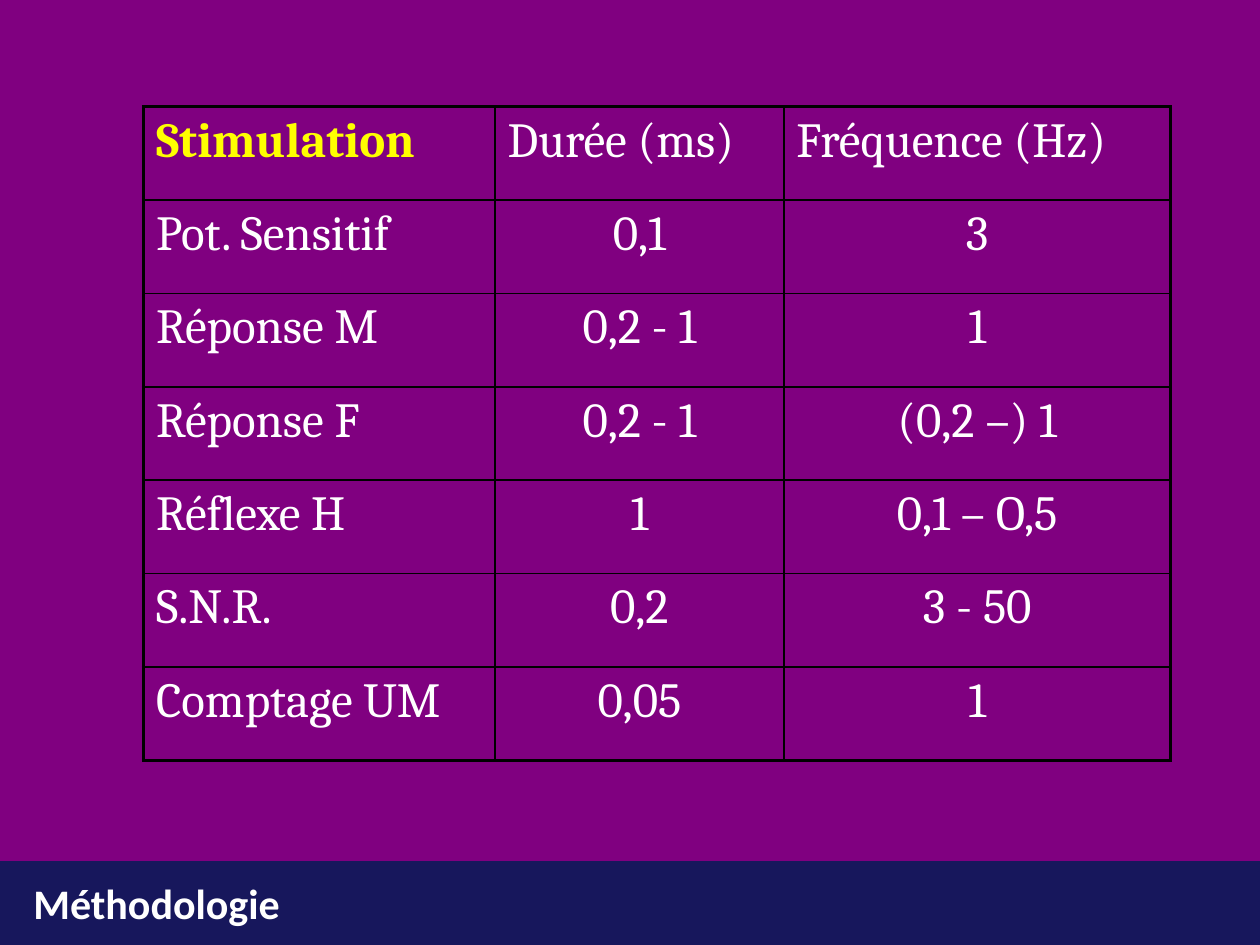
from lxml.etree import SubElement
from pptx import Presentation
from pptx.dml.color import RGBColor
from pptx.enum.shapes import MSO_SHAPE as Shape
from pptx.enum.text import PP_ALIGN as Align
from pptx.oxml.ns import qn
from pptx.util import Pt

NAVY = RGBColor(0x17, 0x17, 0x5C)
PURPLE = RGBColor(0x80, 0x00, 0x80)
YELLOW = RGBColor(0xFF, 0xFF, 0x00)
WHITE = RGBColor(0xFF, 0xFF, 0xFF)
BLACK = RGBColor(0x00, 0x00, 0x00)

ROWS = [
    ("Stimulation", "Durée (ms)", "Fréquence (Hz)"),
    ("Pot. Sensitif", "0,1", "3"),
    ("Réponse M", "0,2 - 1", "1"),
    ("Réponse F", "0,2 - 1", "(0,2 –) 1"),
    ("Réflexe H", "1", "0,1 – O,5"),
    ("S.N.R.", "0,2", "3 - 50"),
    ("Comptage UM", "0,05", "1"),
]
COLUMN_WIDTHS = [200.9, 165, 221]
ROW_HEIGHT = 53.35
INNER, OUTER = 1, 2.25


def style_font(paragraph, name, size, color, bold):
    font = paragraph.font
    font.name, font.size, font.bold = name, Pt(size), bold
    font.color.rgb = color


def add_border(cell, side, width):
    """Draw one cell edge; must run before the cell's fill is set."""
    line = SubElement(cell._tc.get_or_add_tcPr(), qn(f"a:ln{side}"), w=str(Pt(width)))
    fill = SubElement(line, qn("a:solidFill"))
    SubElement(fill, qn("a:srgbClr"), val=str(BLACK))


prs = Presentation()
prs.slide_width, prs.slide_height = Pt(720), Pt(540)
slide = prs.slides.add_slide(prs.slide_layouts[6])
slide.background.fill.solid()
slide.background.fill.fore_color.rgb = NAVY

panel = slide.shapes.add_shape(Shape.RECTANGLE, 0, 0, Pt(720), Pt(492))
panel.shadow.inherit = False
panel.fill.solid()
panel.fill.fore_color.rgb = PURPLE
panel.line.fill.background()

footer = slide.shapes.add_textbox(Pt(12), Pt(498), Pt(556), Pt(36)).text_frame
footer.word_wrap = True
footer.text = "Méthodologie"
style_font(footer.paragraphs[0], "Calibri", 24, WHITE, True)

last_row, last_col = len(ROWS) - 1, len(COLUMN_WIDTHS) - 1
settings = slide.shapes.add_table(
    len(ROWS), len(COLUMN_WIDTHS), Pt(82), Pt(61),
    Pt(sum(COLUMN_WIDTHS)), Pt(ROW_HEIGHT * len(ROWS))).table
settings.first_row = settings.horz_banding = False
for column, width in zip(settings.columns, COLUMN_WIDTHS):
    column.width = Pt(width)

for r, values in enumerate(ROWS):
    settings.rows[r].height = Pt(ROW_HEIGHT)
    for c, value in enumerate(values):
        cell = settings.cell(r, c)
        outer_edges = {"L": c == 0, "R": c == last_col, "T": r == 0, "B": r == last_row}
        for side, is_outer in outer_edges.items():
            add_border(cell, side, OUTER if is_outer else INNER)
        cell.fill.background()
        cell.text = value
        entry = cell.text_frame.paragraphs[0]
        entry.alignment = Align.CENTER if r and c else Align.LEFT
        is_title = r == c == 0
        style_font(entry, "Cambria", 28, YELLOW if is_title else WHITE, is_title)

prs.save("out.pptx")
